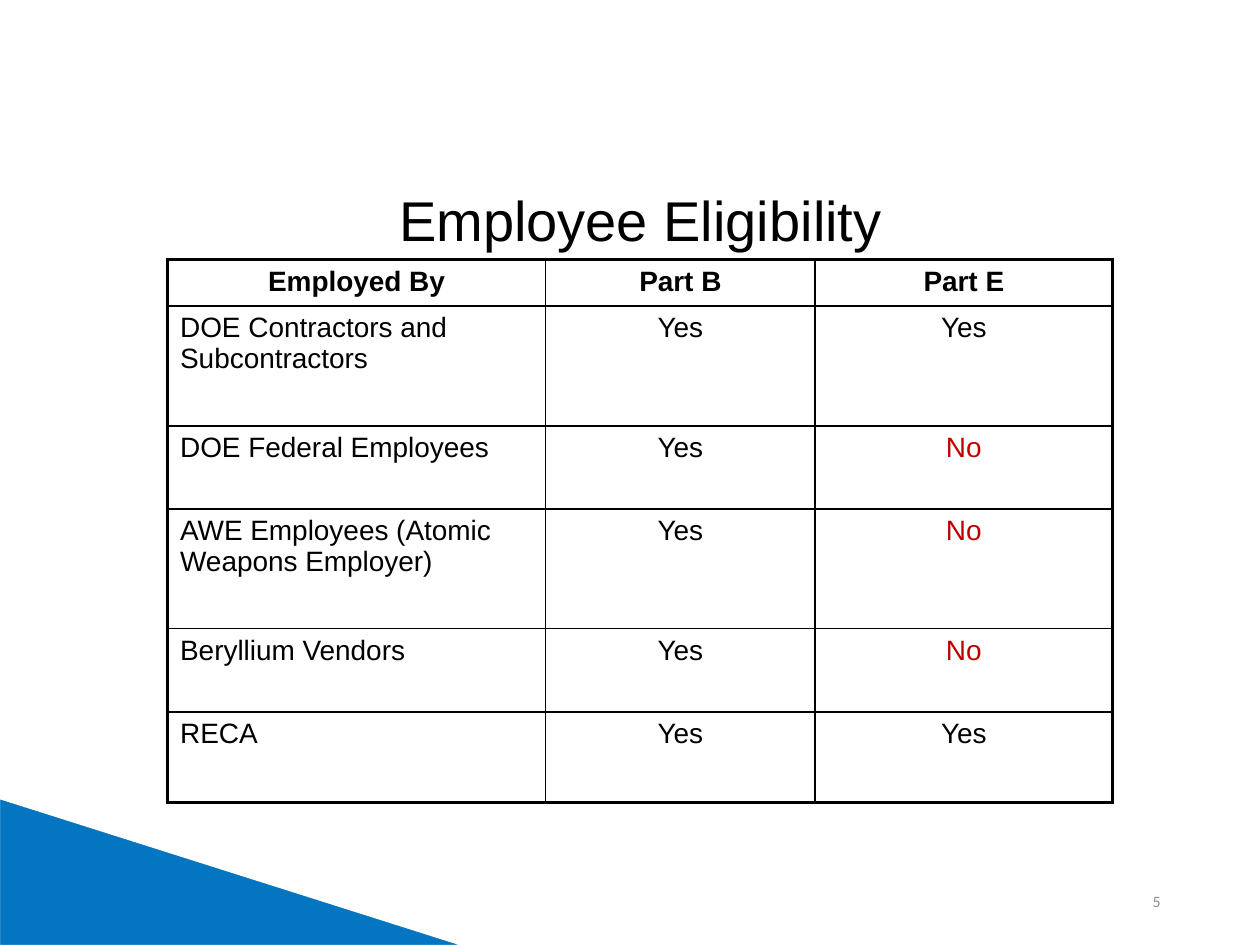
from lxml.etree import SubElement
from pptx import Presentation
from pptx.dml.color import RGBColor
from pptx.enum.shapes import MSO_SHAPE
from pptx.enum.text import MSO_ANCHOR, MSO_AUTO_SIZE, PP_ALIGN
from pptx.oxml.ns import qn
from pptx.util import Inches, Pt

BLACK = RGBColor(0x00, 0x00, 0x00)
WHITE = RGBColor(0xFF, 0xFF, 0xFF)
BLUE = RGBColor(0x04, 0x75, 0xC0)
RED = RGBColor(0xC0, 0x00, 0x00)
GRAY = RGBColor(0x8C, 0x8C, 0x8C)

THIN, THICK = Pt(1), Pt(2.25)
COLUMN_WIDTHS = [3, 2.14, 2.36]
ROW_HEIGHTS = [0.37, 0.95, 0.66, 0.95, 0.66, 0.72]
ELIGIBILITY = [
    ("Employed By", "Part B", "Part E"),
    ("DOE Contractors and Subcontractors", "Yes", "Yes"),
    ("DOE Federal Employees", "Yes", "No"),
    ("AWE Employees (Atomic Weapons Employer)", "Yes", "No"),
    ("Beryllium Vendors", "Yes", "No"),
    ("RECA", "Yes", "Yes"),
]


class SlideBuilder:
    def __init__(self, slide, font="Arial"):
        self.slide = slide
        self.font = font

    def add_text(self, text_frame, text, size, color=BLACK, align=PP_ALIGN.CENTER,
                 bold=False, font=None):
        paragraph = text_frame.paragraphs[0]
        paragraph.alignment = align
        run = paragraph.add_run()
        run.text = text
        run.font.name = font or self.font
        run.font.size = Pt(size)
        run.font.bold = bold
        run.font.color.rgb = color

    def corner_triangle(self, left, top, width, height):
        triangle = self.slide.shapes.add_shape(
            MSO_SHAPE.RIGHT_TRIANGLE, Inches(left), Inches(top), Inches(width), Inches(height))
        triangle.shadow.inherit = False
        triangle.fill.solid()
        triangle.fill.fore_color.rgb = BLUE
        triangle.line.color.rgb = WHITE
        triangle.line.width = Pt(1.5)

    def title(self, text, left, top, width, height):
        title = self.slide.shapes.title
        title.left, title.top = Inches(left), Inches(top)
        title.width, title.height = Inches(width), Inches(height)
        title.text_frame.vertical_anchor = MSO_ANCHOR.TOP
        title.text_frame.auto_size = MSO_AUTO_SIZE.SHAPE_TO_FIT_TEXT
        self.add_text(title.text_frame, text, 32)

    def page_number(self, text, left, top, width, height):
        box = self.slide.shapes.add_textbox(
            Inches(left), Inches(top), Inches(width), Inches(height))
        box.text_frame.word_wrap = True
        box.text_frame.vertical_anchor = MSO_ANCHOR.MIDDLE
        self.add_text(box.text_frame, text, 9, GRAY, PP_ALIGN.RIGHT, font="Calibri")

    def table(self, rows, left, top, column_widths, row_heights):
        """Add a table with a thick outer frame and thin inner lines."""
        frame = self.slide.shapes.add_table(
            len(rows), len(column_widths), Inches(left), Inches(top),
            Inches(sum(column_widths)), Inches(sum(row_heights)))
        table = frame.table
        table.first_row = table.horz_banding = False
        for column, width in zip(table.columns, column_widths):
            column.width = Inches(width)
        last_row, last_column = len(rows) - 1, len(column_widths) - 1
        for row_index, values in enumerate(rows):
            table.rows[row_index].height = Inches(row_heights[row_index])
            for column_index, text in enumerate(values):
                cell = table.cell(row_index, column_index)
                is_header = row_index == 0
                is_label = column_index == 0 and not is_header
                self.add_text(cell.text_frame, text, 16,
                              color=RED if text == "No" else BLACK,
                              align=PP_ALIGN.LEFT if is_label else PP_ALIGN.CENTER,
                              bold=is_header)
                self.borders(cell, {
                    "a:lnL": column_index == 0,
                    "a:lnR": column_index == last_column,
                    "a:lnT": row_index == 0,
                    "a:lnB": row_index == last_row,
                })
                cell.fill.solid()
                cell.fill.fore_color.rgb = WHITE

    def borders(self, cell, outer_edges):
        """Draw each edge, thick where outer_edges marks it as outer."""
        properties = cell._tc.get_or_add_tcPr()
        for tag, is_outer in outer_edges.items():
            line = SubElement(properties, qn(tag), w=str(THICK if is_outer else THIN))
            fill = SubElement(line, qn("a:solidFill"))
            SubElement(fill, qn("a:srgbClr"), val=str(BLACK))


def main():
    presentation = Presentation()
    presentation.slide_width, presentation.slide_height = Inches(10), Inches(7.5)
    title_only = presentation.slide_layouts[5]
    builder = SlideBuilder(presentation.slides.add_slide(title_only))
    builder.corner_triangle(-0.01, 6.33, 3.72, 1.18)
    builder.page_number("5", 7.06, 6.95, 2.25, 0.4)
    builder.title("Employee Eligibility", 0.92, 1.42, 8.33, 0.64)
    builder.table(ELIGIBILITY, 1.33, 2.06, COLUMN_WIDTHS, ROW_HEIGHTS)
    presentation.save("out.pptx")


if __name__ == "__main__":
    main()
